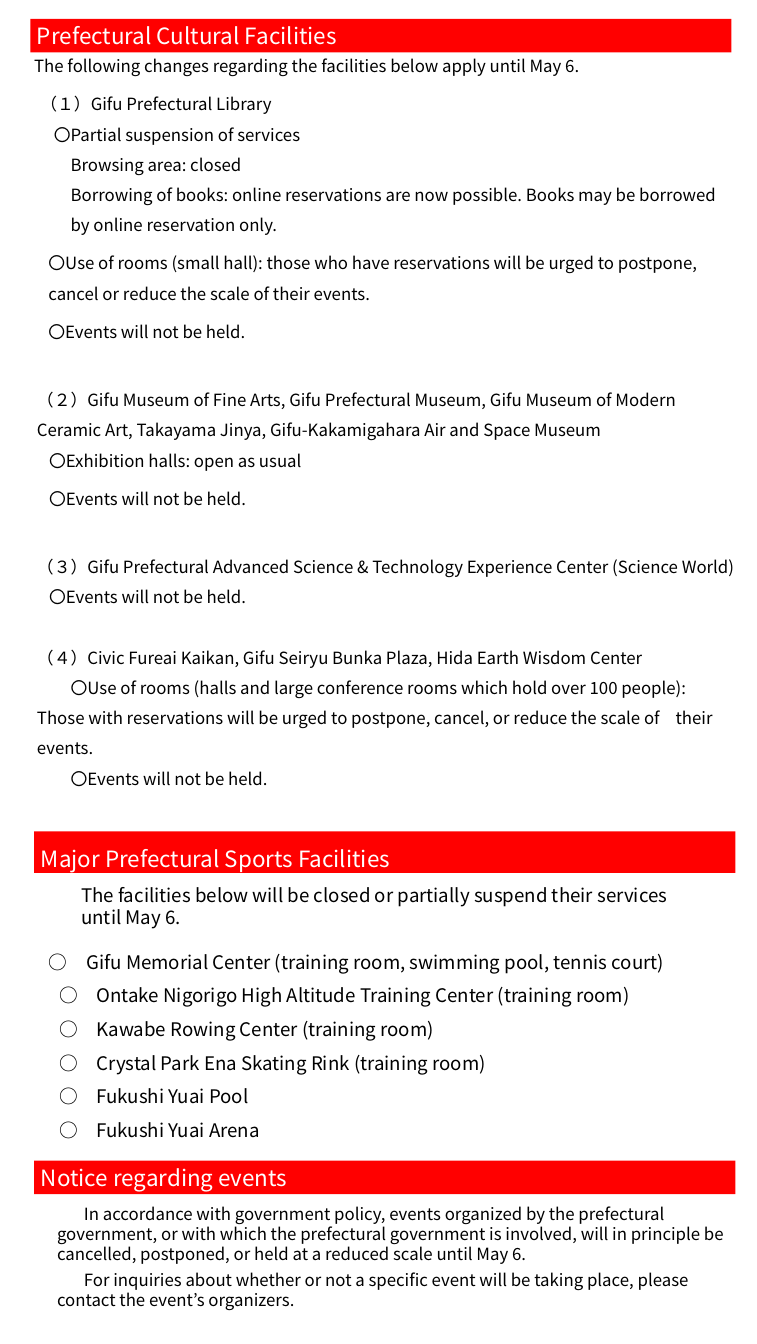
"""Build the one-page notice on prefectural facilities and events."""
from lxml.etree import SubElement as Sub
from pptx import Presentation
from pptx.dml.color import RGBColor
from pptx.enum.shapes import MSO_SHAPE
from pptx.enum.text import MSO_ANCHOR, MSO_AUTO_SIZE, PP_ALIGN
from pptx.oxml.ns import qn
from pptx.util import Inches, Pt

RED = RGBColor(255, 0, 0)
WHITE = RGBColor(255, 255, 255)
BLACK = RGBColor(0, 0, 0)
FONT = "Noto Sans CJK JP"
CELL = Inches(0.1)
TABS = [5, 95]


def place(shape, left, top, width, height, anchor=MSO_ANCHOR.TOP):
    shape.left, shape.top = int(left * CELL), int(top * CELL)
    shape.width, shape.height = int(width * CELL), int(height * CELL)
    frame = shape.text_frame
    frame.word_wrap = True
    frame.auto_size = MSO_AUTO_SIZE.NONE
    frame.vertical_anchor = anchor
    return frame


def write(frame, text, size=18, color=BLACK, left=0, first=0, line=1.0, before=0):
    para = frame.paragraphs[0]
    if para.runs:
        para = frame.add_paragraph()
    props = para._p.get_or_add_pPr()
    props.set("marL", str(int(left * CELL)))
    props.set("indent", str(int(first * CELL)))
    Sub(props, qn("a:buNone"))
    if "\t" in text:
        stops = Sub(props, qn("a:tabLst"))
        for stop in TABS:
            Sub(stops, qn("a:tab"), pos=str(stop * CELL), algn="l")
    para.alignment = PP_ALIGN.LEFT
    para.line_spacing = line
    para.space_before = Pt(before)
    run = para.add_run()
    run.text = text
    run.font.size = Pt(size)
    run.font.name = FONT
    run.font.color.rgb = color
    Sub(run._r.get_or_add_rPr(), qn("a:ea"), typeface=FONT)


deck = Presentation()
deck.slide_width, deck.slide_height = Inches(11.26), Inches(20)
slide = deck.slides.add_slide(deck.slide_layouts[1])
shapes = slide.shapes
title, body = shapes.title, slide.placeholders[1]

sports = shapes.add_shape(MSO_SHAPE.RECTANGLE, 0, 0, CELL, CELL)
notice = shapes.add_shape(MSO_SHAPE.RECTANGLE, 0, 0, CELL, CELL)
for bar in (sports, notice):
    bar.shadow.inherit = False

bars = [
    (title, "Prefectural Cultural Facilities", 4.5, 2.8, 5, 1),
    (sports, "Major Prefectural Sports Facilities", 5.1, 123.7, 6.2, 1.5),
    (notice, "Notice regarding events", 5.1, 172.7, 5, 1),
]
for bar, text, left, top, height, line in bars:
    bar.fill.solid()
    bar.fill.fore_color.rgb = RED
    bar.line.fill.background()
    frame = place(bar, left, top, 104.3, height, MSO_ANCHOR.MIDDLE)
    write(frame, text, size=24, color=WHITE, line=line)

intros = [
    ("The following changes regarding the facilities below apply until May 6.",
     18, 0.8, 7.8, 109.6, 4),
    ("The facilities below will be closed or partially suspend their services until May 6.",
     20, 7.8, 131, 99.1, 7.7),
]
for text, size, left, top, width, height in intros:
    box = shapes.add_textbox(0, 0, CELL, CELL)
    write(place(box, left, top, width, height), text, size=size, left=3.3)

culture = [
    ("（１）Gifu Prefectural Library", 0, 0.5, 0),
    ("〇Partial suspension of services", 0, 2.5, 0),
    ("\tBrowsing area: closed", 0, 0, 0),
    ("Borrowing of books: online reservations are now possible. Books may be "
     "borrowed by online reservation only.", 5, 0, 0),
    ("〇Use of rooms (small hall): those who have reservations will be urged to "
     "postpone, cancel or reduce the scale of their events.", 1.7, 0, 8.4),
    ("〇Events will not be held.", 1.7, 0, 8.4),
    ("（２）Gifu Museum of Fine Arts, Gifu Prefectural Museum, Gifu Museum of Modern "
     "Ceramic Art, Takayama Jinya, Gifu-Kakamigahara Air and Space Museum", 0, 0, 40.8),
    ("〇Exhibition halls: open as usual", 0, 1.8, 0),
    ("〇Events will not be held.", 0, 1.8, 8.4),
    ("（３）Gifu Prefectural Advanced Science & Technology Experience Center "
     "(Science World)", 0, 0, 40.8),
    ("〇Events will not be held.", 0, 1.8, 0),
    ("（４）Civic Fureai Kaikan, Gifu Seiryu Bunka Plaza, Hida Earth Wisdom Center",
     0, 0, 32.4),
    ("\t〇Use of rooms (halls and large conference rooms which hold over 100 people): "
     "\tThose with reservations will be urged to postpone, cancel, or reduce the "
     "scale of \ttheir events.", 0, 0, 0),
    ("\t〇Events will not be held.", 0, 0, 0),
]
frame = place(body, 4.5, 12, 105.9, 111.1)
for text, left, first, before in culture:
    write(frame, text, left=left, first=first, line=1.5, before=before)

venues = [
    "Gifu Memorial Center (training room, swimming pool, tennis court)",
    "Ontake Nigorigo High Altitude Training Center (training room)",
    "Kawabe Rowing Center (training room)",
    "Crystal Park Ena Skating Rink (training room)",
    "Fukushi Yuai Pool",
    "Fukushi Yuai Arena",
]
frame = place(shapes.add_textbox(0, 0, CELL, CELL), 3.9, 139.3, 105.5, 31.3)
for row, venue in enumerate(venues):
    write(frame, "○　" + venue, size=20, first=3.9 if row else 2.4, line=1.5)

events = [
    "In accordance with government policy, events organized by the prefectural "
    "government, or with which the prefectural government is involved, will in "
    "principle be cancelled, postponed, or held at a reduced scale until May 6.",
    "For inquiries about whether or not a specific event will be taking place, "
    "please contact the event’s organizers.",
]
frame = place(shapes.add_textbox(0, 0, CELL, CELL), 7.5, 178.6, 101.3, 17.4)
for row, text in enumerate(events):
    write(frame, text, first=4, before=6 * row)

deck.save("out.pptx")
